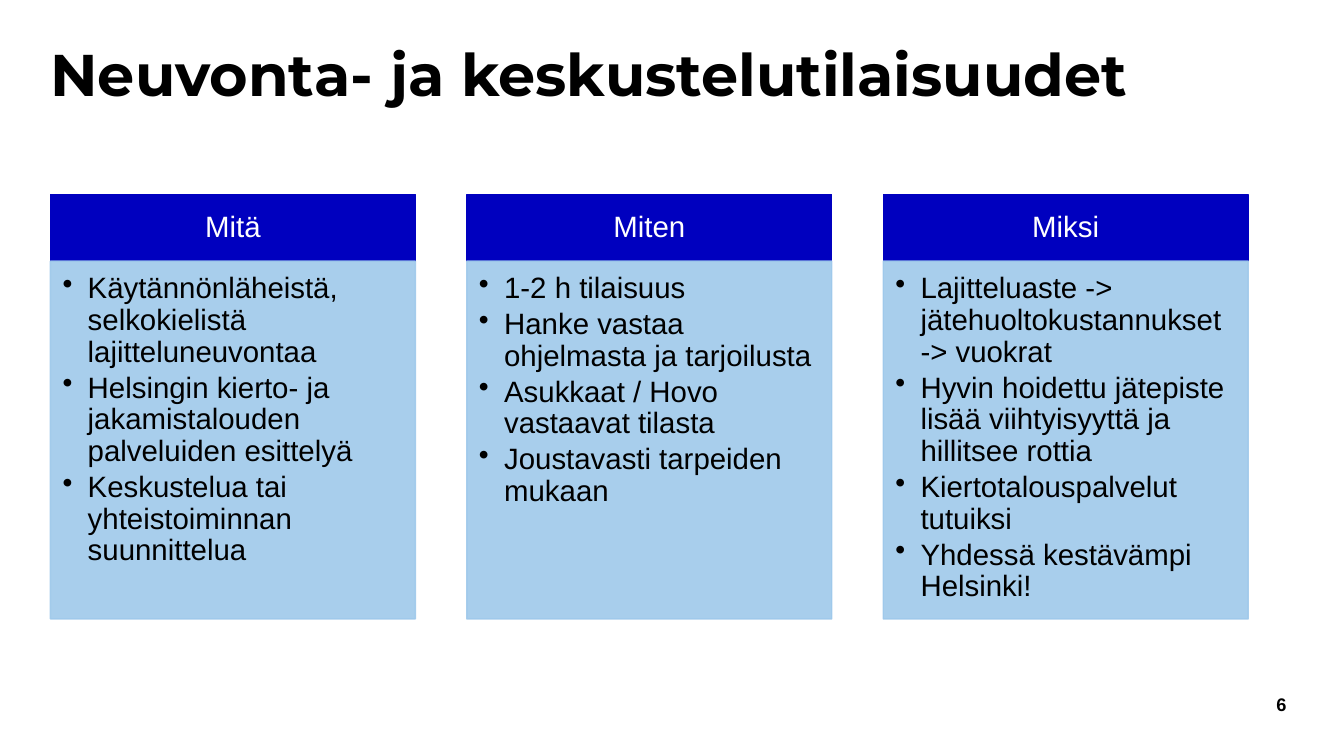
import pptx
import pptx.dml.color
import pptx.enum.shapes
import pptx.enum.text
import pptx.oxml.ns
import pptx.util
from lxml import etree
from pptx.util import Inches

BLACK = pptx.dml.color.RGBColor(0x00, 0x00, 0x00)
WHITE = pptx.dml.color.RGBColor(0xFF, 0xFF, 0xFF)
DARK_BLUE = pptx.dml.color.RGBColor(0x00, 0x00, 0xBF)
LIGHT_BLUE = pptx.dml.color.RGBColor(0x9F, 0xC9, 0xEB)

LEFT, COLUMN_STEP, COLUMN_WIDTH = 0.5, 4.13, 3.62
HEADER_TOP, HEADER_HEIGHT, LIST_HEIGHT = 1.93, 0.66, 3.55

COLUMNS = [
    ("Mitä", [
        "Käytännönläheistä, selkokielistä lajitteluneuvontaa",
        "Helsingin kierto- ja jakamistalouden palveluiden esittelyä",
        "Keskustelua tai yhteistoiminnan suunnittelua",
    ]),
    ("Miten", [
        "1-2 h tilaisuus",
        "Hanke vastaa ohjelmasta ja tarjoilusta",
        "Asukkaat / Hovo vastaavat tilasta",
        "Joustavasti tarpeiden mukaan",
    ]),
    ("Miksi", [
        "Lajitteluaste -> jätehuoltokustannukset -> vuokrat",
        "Hyvin hoidettu jätepiste lisää viihtyisyyttä ja hillitsee rottia",
        "Kiertotalouspalvelut tutuiksi",
        "Yhdessä kestävämpi Helsinki!",
    ]),
]

presentation = pptx.Presentation()
presentation.slide_width = Inches(13.33)
presentation.slide_height = Inches(7.5)
slide = presentation.slides.add_slide(presentation.slide_layouts[5])


def set_frame(shape, anchor, left=0, top=0, right=0, bottom=0):
    frame = shape.text_frame
    frame.word_wrap = True
    frame.auto_size = pptx.enum.text.MSO_AUTO_SIZE.NONE
    frame.vertical_anchor = anchor
    frame.margin_left, frame.margin_top = Inches(left), Inches(top)
    frame.margin_right, frame.margin_bottom = Inches(right), Inches(bottom)
    return frame


def write(paragraph, text, size, color, alignment, font="Arial", bold=False):
    paragraph.alignment = alignment
    paragraph.line_spacing = 0.9
    run = paragraph.add_run()
    run.text = text
    run.font.size = pptx.util.Pt(size)
    run.font.name = font
    run.font.bold = bold
    run.font.color.rgb = color


ANCHOR = pptx.enum.text.MSO_ANCHOR
ALIGN = pptx.enum.text.PP_ALIGN

# Title
title = slide.shapes.title
title.left, title.top = Inches(LEFT), Inches(0.45)
title.width, title.height = Inches(11.87), Inches(0.86)
frame = set_frame(title, ANCHOR.TOP)
write(frame.paragraphs[0], "Neuvonta- ja keskustelutilaisuudet", 42, BLACK,
      ALIGN.LEFT, "Montserrat", True)

# Three columns: a header above a bulleted list
for index, (heading, points) in enumerate(COLUMNS):
    left = Inches(LEFT + index * COLUMN_STEP)
    header = slide.shapes.add_shape(
        pptx.enum.shapes.MSO_SHAPE.RECTANGLE, left, Inches(HEADER_TOP),
        Inches(COLUMN_WIDTH), Inches(HEADER_HEIGHT))
    panel = slide.shapes.add_shape(
        pptx.enum.shapes.MSO_SHAPE.RECTANGLE, left, Inches(HEADER_TOP + HEADER_HEIGHT),
        Inches(COLUMN_WIDTH), Inches(LIST_HEIGHT))
    for shape, color in ((header, DARK_BLUE), (panel, LIGHT_BLUE)):
        shape.shadow.inherit = False
        shape.fill.solid()
        shape.fill.fore_color.rgb = color
        shape.line.color.rgb = color
        shape.line.width = pptx.util.Pt(1)

    # Panel fill and outline are 90 % opaque
    for color_element in panel.element.spPr.iter(pptx.oxml.ns.qn("a:srgbClr")):
        etree.SubElement(color_element, pptx.oxml.ns.qn("a:alpha"), val="90000")

    frame = set_frame(header, ANCHOR.MIDDLE, 0.16, 0.09, 0.16, 0.09)
    write(frame.paragraphs[0], heading, 21, WHITE, ALIGN.CENTER)

    frame = set_frame(panel, ANCHOR.TOP, 0.12, 0.12, 0.16, 0.18)
    for number, point in enumerate(points):
        paragraph = frame.add_paragraph() if number else frame.paragraphs[0]
        properties = paragraph._p.get_or_add_pPr()
        properties.set("marL", str(Inches(0.25)))
        properties.set("indent", str(Inches(-0.25)))
        etree.SubElement(properties, pptx.oxml.ns.qn("a:buChar"), char="•")
        paragraph.space_after = pptx.util.Pt(3)
        write(paragraph, point, 21, BLACK, ALIGN.LEFT)

# Page number
page_number = slide.shapes.add_textbox(
    Inches(11.41), Inches(6.86), Inches(1.35), Inches(0.28))
frame = set_frame(page_number, ANCHOR.MIDDLE)
write(frame.paragraphs[0], "6", 13, BLACK, ALIGN.RIGHT, bold=True)

presentation.save("out.pptx")
